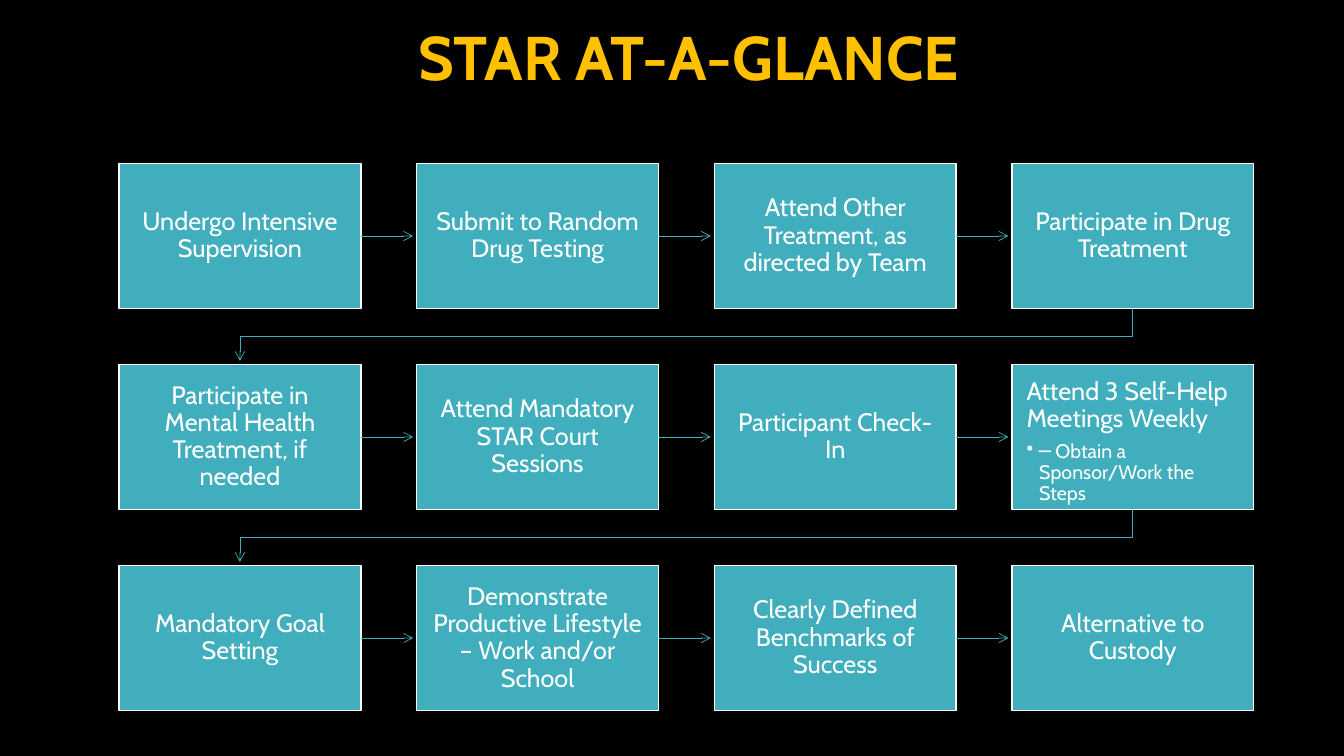
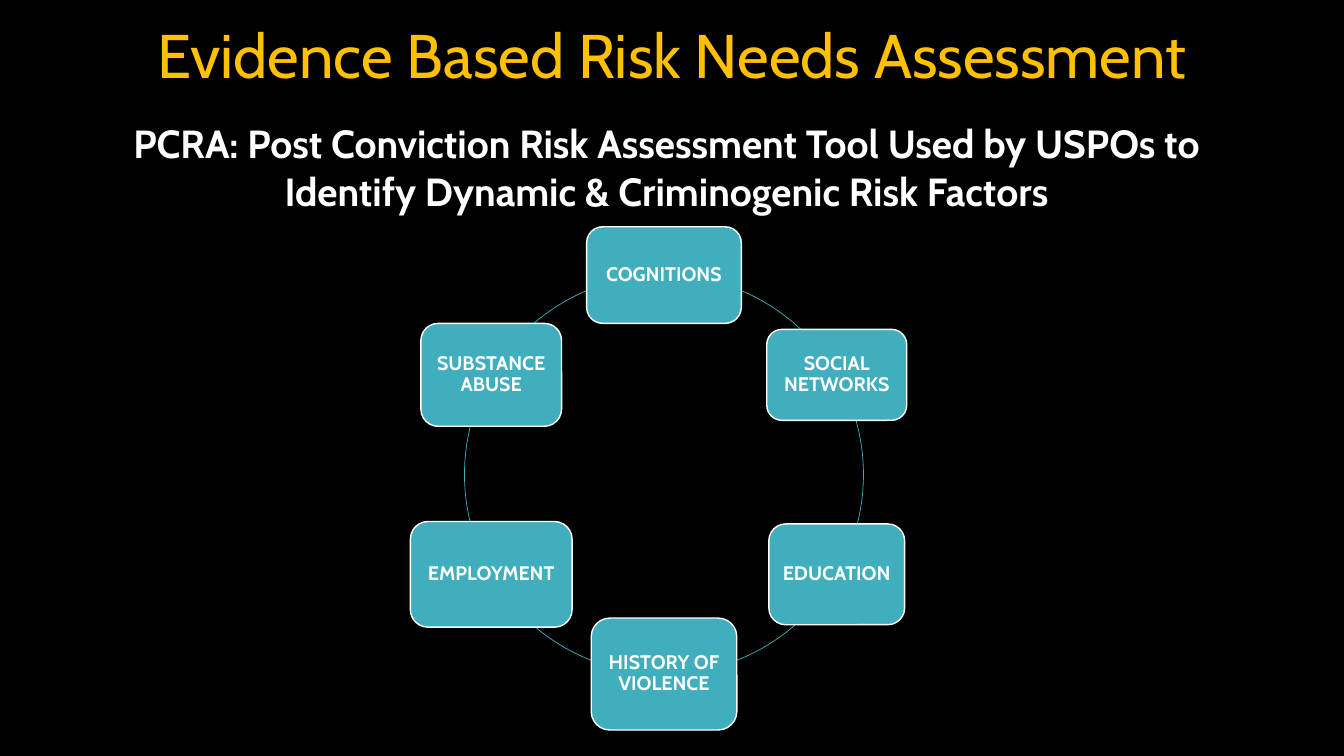
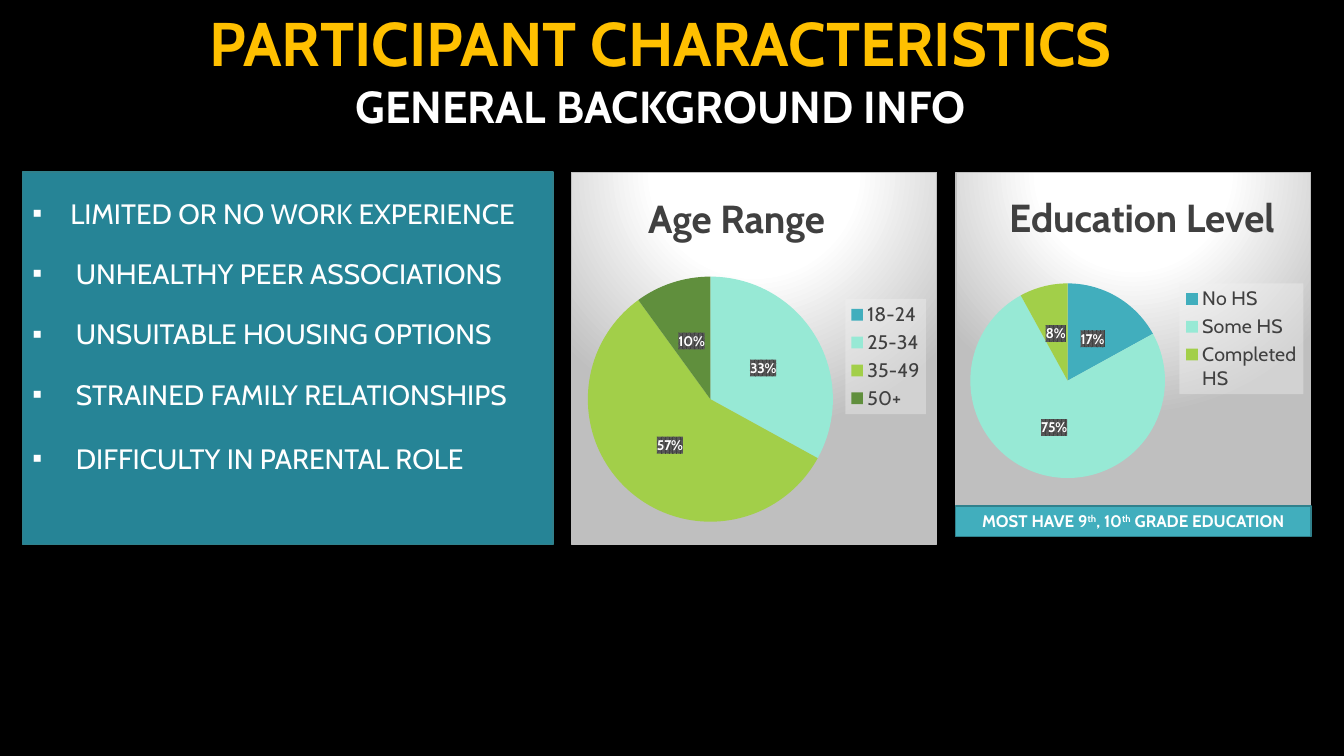
import math

from lxml import etree
from pptx import Presentation
from pptx import util as u
from pptx.chart.data import CategoryChartData
from pptx.dml.color import RGBColor
from pptx.enum import chart as charts, shapes, text
from pptx.oxml import parse_xml
from pptx.oxml.ns import nsdecls, qn

Pt = u.Pt
BLACK = RGBColor(0x00, 0x00, 0x00)
WHITE = RGBColor(0xFF, 0xFF, 0xFF)
GOLD = RGBColor(0xFF, 0xC0, 0x00)
TEAL = RGBColor(0x41, 0xAE, 0xBD)
DARK_TEAL = RGBColor(0x26, 0x84, 0x96)
EDGE_TEAL = RGBColor(0x30, 0x81, 0x8C)
MINT = RGBColor(0x97, 0xE9, 0xD5)
LIME = RGBColor(0xA2, 0xCF, 0x49)
GREEN = RGBColor(0x60, 0x8F, 0x3D)
CHARCOAL = RGBColor(0x40, 0x40, 0x40)
FONT = "Cabin"
CENTER, LEFT = text.PP_ALIGN.CENTER, text.PP_ALIGN.LEFT
TOP, MIDDLE = text.MSO_ANCHOR.TOP, text.MSO_ANCHOR.MIDDLE

CHART_FILL = f"""<c:spPr {nsdecls('c', 'a')}>
  <a:gradFill><a:gsLst>
    <a:gs pos="0"><a:srgbClr val="FFFFFF"/></a:gs>
    <a:gs pos="39000"><a:srgbClr val="FFFFFF"/></a:gs>
    <a:gs pos="100000"><a:srgbClr val="BFBFBF"/></a:gs>
  </a:gsLst><a:path path="circle">
    <a:fillToRect l="50000" t="-80000" r="50000" b="180000"/></a:path></a:gradFill>
  <a:ln w="9525"><a:solidFill><a:srgbClr val="BFBFBF"/></a:solidFill></a:ln>
</c:spPr>"""
LEGEND_FILL = f"""<c:spPr {nsdecls('c', 'a')}><a:solidFill>
  <a:srgbClr val="F2F2F2"><a:alpha val="39000"/></a:srgbClr></a:solidFill></c:spPr>"""
LABEL_FILL = f"""<c:spPr {nsdecls('c', 'a')}><a:pattFill prst="pct75">
  <a:fgClr><a:srgbClr val="404040"/></a:fgClr>
  <a:bgClr><a:srgbClr val="595959"/></a:bgClr></a:pattFill></c:spPr>"""
HIDDEN_LABEL = f'<c:dLbl {nsdecls("c")}><c:idx val="%d"/><c:delete val="1"/></c:dLbl>'


def style(paragraph, size, color=WHITE, bold=False, align=CENTER, spacing=1.0):
    """Set the alignment, line spacing and font of a whole paragraph."""
    paragraph.alignment = align
    paragraph.line_spacing = spacing
    font = paragraph.font
    font.name, font.size, font.bold = FONT, Pt(size), bold
    font.color.rgb = color


def add_card(slide, kind, box, edge, inset):
    """Add a teal box; box is left, top, width, height in points."""
    card = slide.shapes.add_shape(kind, *map(Pt, box))
    card.shadow.inherit = False
    card.fill.solid()
    card.fill.fore_color.rgb = TEAL
    card.line.color.rgb = edge
    card.line.width = Pt(1)
    frame = card.text_frame
    frame.word_wrap = True
    frame.vertical_anchor = MIDDLE
    frame.margin_left = frame.margin_right = Pt(inset)
    frame.margin_top = frame.margin_bottom = Pt(min(inset, 10))
    return card


presentation = Presentation()
presentation.slide_width, presentation.slide_height = Pt(960), Pt(540)
background = presentation.slide_master.background.fill
background.solid()
background.fore_color.rgb = BLACK

# Titles: layout, text, box, bold, anchor, line spacing
titles = [
    (5, "STAR AT-A-GLANCE", (78, 6, 828, 75), True, MIDDLE, 0.9),
    (5, "Evidence Based Risk Needs Assessment", (66, 4, 828, 75), False, MIDDLE, 0.9),
    (1, "PARTICIPANT CHARACTERISTICS", (0, 0, 944, 100), True, TOP, 1.0),
]
for layout, wording, box, bold, anchor, spacing in titles:
    slide = presentation.slides.add_slide(presentation.slide_layouts[layout])
    title = slide.shapes.title
    title.left, title.top, title.width, title.height = map(Pt, box)
    title.text_frame.text = wording
    title.text_frame.auto_size = text.MSO_AUTO_SIZE.NONE
    title.text_frame.vertical_anchor = anchor
    style(title.text_frame.paragraphs[0], 44, GOLD, bold, spacing=spacing)
flow_slide, ring_slide, profile_slide = presentation.slides

# Slide 1: flow of steps
STEPS = [
    ["Undergo Intensive Supervision", "Submit to Random Drug Testing",
     "Attend Other Treatment, as directed by Team", "Participate in Drug Treatment"],
    ["Participate in Mental Health Treatment, if needed",
     "Attend Mandatory STAR Court Sessions", "Participant Check-In",
     "Attend 3 Self-Help Meetings Weekly"],
    ["Mandatory Goal Setting", "Demonstrate Productive Lifestyle – Work and/or School",
     "Clearly Defined Benchmarks of Success", "Alternative to Custody"],
]
STEP_WIDTH, STEP_HEIGHT = 172.8, 103.7
STEP_LEFT, STEP_TOP, COLUMN_PITCH, ROW_PITCH = 85, 116.7, 212.6, 143.6
ARROW_GAP = 2.5
first_center = STEP_LEFT + STEP_WIDTH / 2
last_center = first_center + 3 * COLUMN_PITCH
arrows = []
for row, steps in enumerate(STEPS):
    top = STEP_TOP + row * ROW_PITCH
    bottom, next_top = top + STEP_HEIGHT, top + ROW_PITCH
    for column, step in enumerate(steps):
        left = STEP_LEFT + column * COLUMN_PITCH
        card = add_card(flow_slide, shapes.MSO_SHAPE.RECTANGLE,
                        (left, top, STEP_WIDTH, STEP_HEIGHT), WHITE, 10.5)
        card.text_frame.text = step
        style(card.text_frame.paragraphs[0], 18, spacing=0.9)
        if column < 3:
            middle = Pt(top + STEP_HEIGHT / 2)
            arrows.append(flow_slide.shapes.add_connector(
                shapes.MSO_CONNECTOR.STRAIGHT, Pt(left + STEP_WIDTH), middle,
                Pt(left + COLUMN_PITCH - ARROW_GAP), middle))
        if step.startswith("Attend 3"):
            meetings = card.text_frame
    if row < 2:
        turn = (bottom + next_top) / 2
        route = flow_slide.shapes.build_freeform(Pt(last_center), Pt(bottom))
        route.add_line_segments(
            [(Pt(x), Pt(y)) for x, y in [(last_center, turn), (first_center, turn),
                                         (first_center, next_top - ARROW_GAP)]],
            close=False)
        elbow = route.convert_to_shape()
        elbow.fill.background()
        arrows.append(elbow)
for arrow in arrows:
    arrow.line.color.rgb = TEAL
    arrow.line.width = Pt(0.5)
    properties = arrow._element.spPr
    etree.SubElement(properties.find(qn("a:ln")), qn("a:tailEnd"), type="arrow")
    etree.SubElement(properties, qn("a:effectLst"))

meetings.vertical_anchor = TOP
meetings.paragraphs[0].alignment = LEFT
meetings.paragraphs[0].space_after = Pt(6.3)
sponsor = meetings.add_paragraph()
sponsor.text = "─ Obtain a Sponsor/Work the Steps"
bullet_properties = sponsor._p.get_or_add_pPr()
bullet_properties.set("marL", str(Pt(9)))
bullet_properties.set("indent", str(-Pt(9)))
etree.SubElement(bullet_properties, qn("a:buChar"), char="•")
style(sponsor, 14, align=LEFT, spacing=0.9)

# Slide 2: ring of risk factors
FACTORS = [
    ("COGNITIONS", 110.5, 69), ("SOCIAL NETWORKS", 100, 65), ("EDUCATION", 97, 72),
    ("HISTORY OF VIOLENCE", 104, 80), ("EMPLOYMENT", 115.5, 75.5),
    ("SUBSTANCE ABUSE", 100.5, 73.5),
]
RING_X, RING_Y, RADIUS = 474.3, 339, 142.5
ring = ring_slide.shapes.add_shape(
    shapes.MSO_SHAPE.OVAL, Pt(RING_X - RADIUS), Pt(RING_Y - RADIUS),
    Pt(2 * RADIUS), Pt(2 * RADIUS))
ring.shadow.inherit = False
ring.fill.background()
ring.line.color.rgb = TEAL
ring.line.width = Pt(0.5)
for index, (factor, width, height) in enumerate(FACTORS):
    angle = index * math.tau / len(FACTORS)
    left = RING_X + RADIUS * math.sin(angle) - width / 2
    top = RING_Y - RADIUS * math.cos(angle) - height / 2
    card = add_card(ring_slide, shapes.MSO_SHAPE.ROUNDED_RECTANGLE,
                    (left, top, width, height), WHITE, 4)
    card.text_frame.text = factor
    style(card.text_frame.paragraphs[0], 14, bold=True, spacing=0.9)

tool = ring_slide.shapes.add_textbox(Pt(66), Pt(82), Pt(820), Pt(75)).text_frame
tool.word_wrap = True
tool.text = ("PCRA: Post Conviction Risk Assessment Tool Used by USPOs to\n"
             "Identify Dynamic & Criminogenic Risk Factors")
for paragraph in tool.paragraphs:
    style(paragraph, 28, bold=True)

# Slide 3: participant profile
subtitle = profile_slide.shapes.title.text_frame.add_paragraph()
subtitle.text = "GENERAL BACKGROUND INFO"
subtitle.space_before = Pt(0)
style(subtitle, 32, bold=True)

# Text, left indent, space before
TRAITS = [
    ("LIMITED OR NO WORK EXPERIENCE", 27, 0),
    ("UNHEALTHY PEER ASSOCIATIONS", 31, 19.2),
    ("UNSUITABLE HOUSING OPTIONS", 31, 19.2),
    ("STRAINED FAMILY RELATIONSHIPS", 31, 19.2),
    ("DIFFICULTY IN PARENTAL ROLE", 31, 21.6),
]
panel = profile_slide.placeholders[1]
panel.left, panel.top, panel.width, panel.height = Pt(16), Pt(123), Pt(379), Pt(266)
panel.fill.solid()
panel.fill.fore_color.rgb = DARK_TEAL
panel.line.color.rgb = EDGE_TEAL
panel.line.width = Pt(1)
panel.text_frame.auto_size = text.MSO_AUTO_SIZE.NONE
panel.text_frame.vertical_anchor = TOP
panel.text_frame.margin_top = Pt(17)
panel.text_frame.text = "\n".join(trait for trait, _, _ in TRAITS)
for paragraph, (_, indent, gap) in zip(panel.text_frame.paragraphs, TRAITS):
    bullet_properties = paragraph._p.get_or_add_pPr()
    bullet_properties.set("marL", str(Pt(indent)))
    bullet_properties.set("indent", str(-Pt(indent)))
    etree.SubElement(bullet_properties, qn("a:buChar"), char="▪")
    paragraph.space_before = Pt(gap)
    style(paragraph, 20, align=LEFT)

# Title, series name, values, chart box, then title, plot and legend areas as fractions
PIES = [
    ("Age Range", "Series 1", {"18-24": 0, "25-34": 33, "35-49": 57, "50+": 10},
     (408, 123, 261.5, 266),
     (0.19, 0.03), (0.04, 0.28, 0.68, 0.66), (0.75, 0.34, 0.22, 0.31)),
    ("Education Level", "Education Level", {"No HS": 17, "Some HS": 75, "Completed HS": 8},
     (682.5, 123, 254, 240.5),
     (0.13, 0.03), (0.04, 0.33, 0.55, 0.58), (0.63, 0.33, 0.35, 0.33)),
]
for heading, series_name, shares, box, title_area, plot_area, legend_area in PIES:
    data = CategoryChartData()
    data.categories = list(shares)
    data.add_series(series_name, list(shares.values()))
    chart = profile_slide.shapes.add_chart(
        charts.XL_CHART_TYPE.PIE, *map(Pt, box), data).chart
    chart.font.name, chart.font.size = FONT, Pt(10)
    chart.font.color.rgb = WHITE
    chart.has_title = True
    chart.chart_title.text_frame.text = heading
    style(chart.chart_title.text_frame.paragraphs[0], 28, CHARCOAL, True)

    chart.has_legend = True
    legend = chart.legend
    legend.position = charts.XL_LEGEND_POSITION.RIGHT
    legend.include_in_layout = False
    legend.font.name, legend.font.size = FONT, Pt(14)
    legend.font.color.rgb = CHARCOAL

    plot = chart.plots[0]
    plot.vary_by_categories = True
    series = plot.series[0]
    labels = series.data_labels
    labels.show_value, labels.show_percentage = False, True
    labels.number_format, labels.number_format_is_linked = "0%", False
    labels.position = charts.XL_LABEL_POSITION.CENTER
    labels.font.name, labels.font.size, labels.font.bold = FONT, Pt(10), True
    labels.font.color.rgb = WHITE
    for index, (share, color) in enumerate(zip(shares.values(), (TEAL, MINT, LIME, GREEN))):
        wedge = series.points[index].format
        wedge.fill.solid()
        wedge.fill.fore_color.rgb = color
        wedge.line.fill.background()
        if share == 0:
            labels._element.insert(0, parse_xml(HIDDEN_LABEL % index))

    space = chart.element
    space.find(qn("c:chart")).addnext(parse_xml(CHART_FILL))
    for owner, fill in [(legend._element, LEGEND_FILL), (labels._element, LABEL_FILL)]:
        owner.find(qn("c:txPr")).addprevious(parse_xml(fill))
    for tag, position, area in [("c:title", 1, title_area), ("c:plotArea", 0, plot_area),
                                ("c:legend", 1, legend_area)]:
        owner = next(space.iter(qn(tag)))
        for automatic in owner.findall(qn("c:layout")):
            owner.remove(automatic)
        frame_layout = etree.Element(qn("c:layout"))
        manual = etree.SubElement(frame_layout, qn("c:manualLayout"))
        if tag == "c:plotArea":
            etree.SubElement(manual, qn("c:layoutTarget"), val="inner")
        for mode in ("xMode", "yMode"):
            etree.SubElement(manual, qn(f"c:{mode}"), val="edge")
        for side, fraction in zip("xywh", area):
            etree.SubElement(manual, qn(f"c:{side}"), val=str(fraction))
        owner.insert(position, frame_layout)

banner = add_card(profile_slide, shapes.MSO_SHAPE.RECTANGLE,
                  (682.5, 361.5, 254, 21.6), EDGE_TEAL, 3.6)
grade = banner.text_frame.paragraphs[0]
for wording in ("MOST HAVE 9", "th", ", 10", "th", " GRADE EDUCATION"):
    run = grade.add_run()
    run.text = wording
    if wording == "th":
        run.font._element.set("baseline", "30000")
style(grade, 12, bold=True)

presentation.save("out.pptx")
